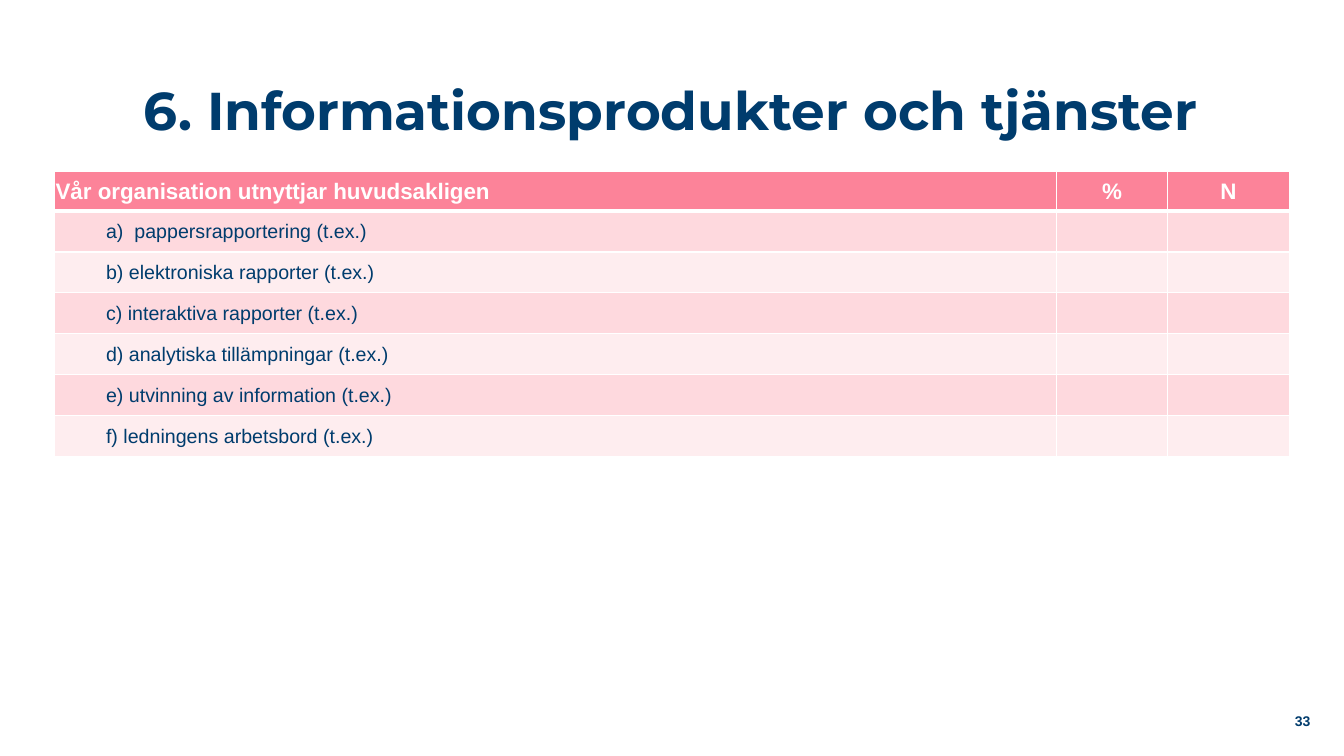
from dataclasses import dataclass

from lxml.etree import SubElement
from pptx import Presentation
from pptx.dml.color import RGBColor as RGB
from pptx.enum.text import MSO_ANCHOR as Anchor, PP_ALIGN as Align
from pptx.oxml.ns import qn
from pptx.table import _Cell as Cell
from pptx.text.text import _Paragraph as Paragraph
from pptx.util import Pt


@dataclass(frozen=True)
class Theme:
    navy: str = "003C6D"
    white: str = "FFFFFF"
    header: str = "FC8399"
    bands: tuple[str, str] = ("FED9DE", "FEEDEF")
    title_font: str = "Montserrat"
    body_font: str = "Arial"
    title_size: float = 38
    header_size: float = 16
    body_size: float = 14
    number_size: float = 10


@dataclass(frozen=True)
class Column:
    heading: str
    width: float
    align: Align


@dataclass(frozen=True)
class TextStyle:
    font: str
    size: float
    color: str
    bold: bool = False


THEME = Theme()
TITLE = TextStyle(THEME.title_font, THEME.title_size, THEME.navy, True)
HEADER = TextStyle(THEME.body_font, THEME.header_size, THEME.white, True)
BODY = TextStyle(THEME.body_font, THEME.body_size, THEME.navy)
NUMBER = TextStyle(THEME.body_font, THEME.number_size, THEME.navy, True)

COLUMNS = [
    Column("Vår organisation utnyttjar huvudsakligen", 715.5, Align.LEFT),
    Column("%", 79.5, Align.CENTER),
    Column("N", 87, Align.CENTER),
]
PRODUCTS = [
    "a)  pappersrapportering (t.ex.)",
    "b) elektroniska rapporter (t.ex.)",
    "c) interaktiva rapporter (t.ex.)",
    "d) analytiska tillämpningar (t.ex.)",
    "e) utvinning av information (t.ex.)",
    "f) ledningens arbetsbord (t.ex.)",
]
HEADER_HEIGHT, ROW_HEIGHT = 28.2, 29.2
THIN, THICK = 1, 3
INDENT = 36


def write(p: Paragraph, text: str, style: TextStyle, align: Align) -> None:
    p.text = text
    p.alignment = align
    for font in [p.font] + [r.font for r in p.runs]:
        font.name = style.font
        font.size = Pt(style.size)
        font.bold = style.bold
        font.color.rgb = RGB.from_string(style.color)


def format_cell(cell: Cell, fill: str, top: float, bottom: float) -> None:
    tc_pr = cell._tc.get_or_add_tcPr()
    for tag, width in (("lnL", THIN), ("lnR", THIN), ("lnT", top), ("lnB", bottom)):
        ln = SubElement(tc_pr, qn(f"a:{tag}"), w=str(Pt(width)))
        SubElement(SubElement(ln, qn("a:solidFill")), qn("a:srgbClr"), val=THEME.white)
    cell.fill.solid()
    cell.fill.fore_color.rgb = RGB.from_string(fill)
    cell.margin_left = cell.margin_right = cell.margin_top = Pt(0.75)
    cell.margin_bottom = Pt(0)
    cell.vertical_anchor = Anchor.MIDDLE


def add_title(slide) -> None:
    sp = slide.shapes.title
    sp.left, sp.top, sp.width, sp.height = Pt(70), Pt(28.8), Pt(818.5), Pt(104.4)
    tf = sp.text_frame
    tf.vertical_anchor = Anchor.MIDDLE
    p = tf.paragraphs[0]
    write(p, "6. Informationsprodukter och tjänster", TITLE, Align.CENTER)
    p.line_spacing = 0.9


def add_product_table(slide) -> None:
    width = sum(column.width for column in COLUMNS)
    height = HEADER_HEIGHT + ROW_HEIGHT * len(PRODUCTS)
    table = slide.shapes.add_table(
        len(PRODUCTS) + 1, len(COLUMNS), Pt(39), Pt(122.6), Pt(width), Pt(height)
    ).table
    for i, row in enumerate(table.rows):
        row.height = Pt(ROW_HEIGHT if i else HEADER_HEIGHT)
        fill = THEME.bands[(i - 1) % 2] if i else THEME.header
        for cell in row.cells:
            format_cell(cell, fill, THICK if i == 1 else THIN, THIN if i else THICK)
    for j, column in enumerate(COLUMNS):
        table.columns[j].width = Pt(column.width)
        p = table.cell(0, j).text_frame.paragraphs[0]
        write(p, column.heading, HEADER, column.align)
    for i, product in enumerate(PRODUCTS, start=1):
        p = table.cell(i, 0).text_frame.paragraphs[0]
        p.level = 1
        p_pr = p._p.get_or_add_pPr()
        p_pr.set("marL", str(Pt(INDENT)))
        p_pr.set("indent", "0")
        write(p, product, BODY, Align.LEFT)


def add_slide_number(slide) -> None:
    tf = slide.shapes.add_textbox(Pt(890.6), Pt(500.4), Pt(45.4), Pt(28.8)).text_frame
    tf.word_wrap = True
    tf.margin_right = Pt(0)
    tf.vertical_anchor = Anchor.MIDDLE
    write(tf.paragraphs[0], "33", NUMBER, Align.RIGHT)


def main() -> None:
    prs = Presentation()
    prs.slide_width, prs.slide_height = Pt(960), Pt(540)
    slide = prs.slides.add_slide(prs.slide_layouts[5])
    add_title(slide)
    add_product_table(slide)
    add_slide_number(slide)
    prs.save("out.pptx")


if __name__ == "__main__":
    main()
